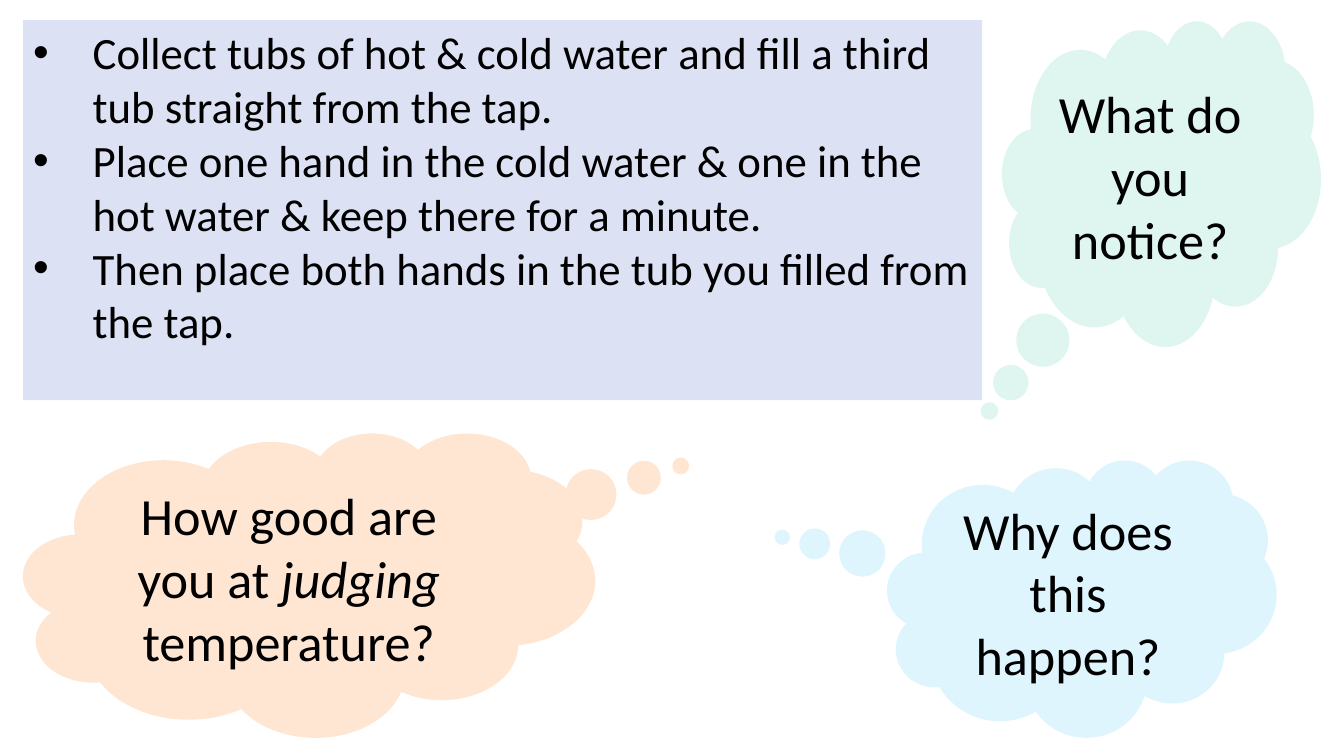
from lxml import etree
from pptx import Presentation
from pptx.dml.color import RGBColor
from pptx.enum.shapes import MSO_SHAPE
from pptx.enum.text import MSO_ANCHOR, PP_ALIGN
from pptx.oxml.ns import qn
from pptx.util import Inches, Pt

PANEL, CLOUD = MSO_SHAPE.ROUNDED_RECTANGLE, MSO_SHAPE.CLOUD_CALLOUT
TOP, MIDDLE = MSO_ANCHOR.TOP, MSO_ANCHOR.MIDDLE
LEFT, CENTER = PP_ALIGN.LEFT, PP_ALIGN.CENTER
SLIDE_WIDTH, SLIDE_HEIGHT = Inches(13.33), Inches(7.5)
FONT = "Calibri"
STEP_INDENT = Inches(0.59)

STEPS_BOX = (1.73, 2.67, 71.34, 50.27)
STEPS = [
    "Collect tubs of hot & cold water and fill a third tub straight from the tap.",
    "Place one hand in the cold water & one in the hot water & keep there for a minute.",
    "Then place both hands in the tub you filled from the tap.",
]
QUESTIONS = [
    ((1.73, 57.2, 42.54, 40.27), (0.65, -0.39), "FFE6D3",
     [("How good are you at ", False), ("judging", True), (" temperature?", False)]),
    ((74.57, 2.67, 23.71, 43.07), (-0.54, 0.7), "DFF5EF",
     [("What do you notice?", False)]),
    ((66.02, 60.8, 28.96, 36.67), (-0.77, -0.22), "DFF5FD",
     [("Why does this happen?", False)]),
]


def color(hex_code):
    """Turn a hex string into a colour."""
    return RGBColor.from_string(hex_code)


def add_region(slide, kind, box, adjustments, fill, anchor):
    """Place a flat filled shape in a box given in percent of the slide."""
    left, top, width, height = box
    region = slide.shapes.add_shape(
        kind,
        round(SLIDE_WIDTH * left / 100), round(SLIDE_HEIGHT * top / 100),
        round(SLIDE_WIDTH * width / 100), round(SLIDE_HEIGHT * height / 100))
    region.shadow.inherit = False
    region.fill.solid()
    region.fill.fore_color.rgb = color(fill)
    region.line.fill.background()
    for index, value in enumerate(adjustments):
        region.adjustments[index] = value
    region.text_frame.word_wrap = True
    region.text_frame.vertical_anchor = anchor
    return region.text_frame


def style_paragraph(paragraph, size, alignment):
    """Set the font and alignment of a paragraph."""
    paragraph.alignment = alignment
    paragraph.font.name = FONT
    paragraph.font.size = Pt(size)
    paragraph.font.color.rgb = color("000000")


def add_bullet(paragraph):
    """Give a paragraph a bullet with a hanging indent."""
    properties = paragraph._p.get_or_add_pPr()
    properties.set("marL", str(STEP_INDENT))
    properties.set("indent", str(-STEP_INDENT))
    bullet_font = etree.Element(qn("a:buFont"), typeface="Arial")
    bullet = etree.Element(qn("a:buChar"), char="•")
    properties.insert(0, bullet_font)
    properties.insert(1, bullet)


def add_steps(slide, box, steps):
    """Draw the panel of bulleted instructions."""
    frame = add_region(slide, PANEL, box, [0], "DCE1F4", TOP)
    for index, step in enumerate(steps):
        paragraph = frame.add_paragraph() if index else frame.paragraphs[0]
        paragraph.text = step
        style_paragraph(paragraph, 32, LEFT)
        add_bullet(paragraph)


def add_question(slide, box, tail, fill, phrases):
    """Draw a thought cloud with its question."""
    frame = add_region(slide, CLOUD, box, tail, fill, MIDDLE)
    paragraph = frame.paragraphs[0]
    style_paragraph(paragraph, 37.3, CENTER)
    for words, emphasised in phrases:
        run = paragraph.add_run()
        run.text = words
        if emphasised:
            run.font.italic = True


def main():
    """Build and save the slide."""
    deck = Presentation()
    deck.slide_width, deck.slide_height = SLIDE_WIDTH, SLIDE_HEIGHT
    slide = deck.slides.add_slide(deck.slide_layouts[6])
    add_steps(slide, STEPS_BOX, STEPS)
    for question in QUESTIONS:
        add_question(slide, *question)
    deck.save("out.pptx")


if __name__ == "__main__":
    main()
